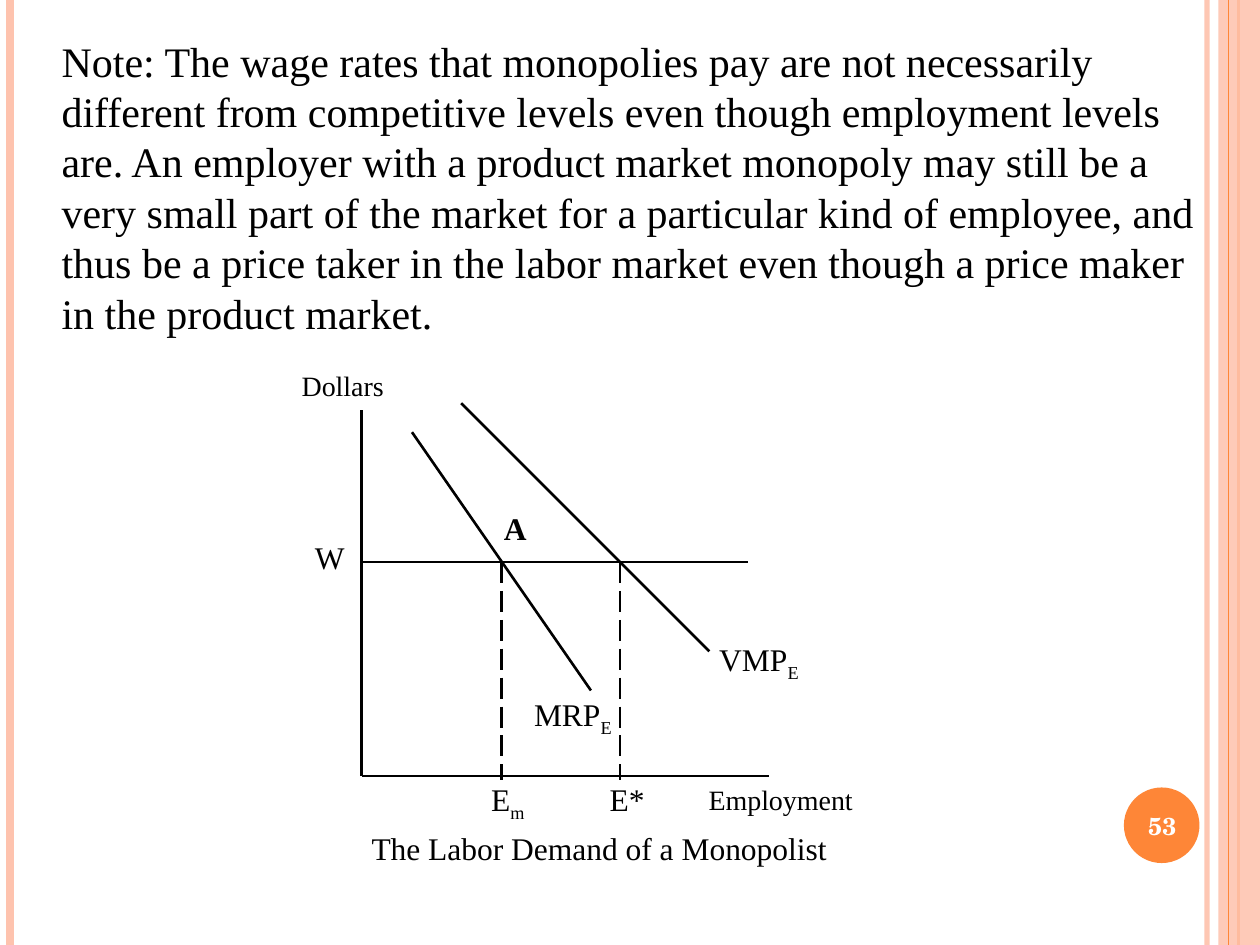
import pptx
import pptx.util
import pptx.dml.color
import pptx.enum.dml
import pptx.enum.shapes
import pptx.enum.text
import pptx.oxml.ns
import lxml.etree

Inches = pptx.util.Inches
COLOURS = {"peach": "FEC3AE", "orange": "FE8637", "black": "000000", "white": "FFFFFF"}
SERIF = "Times New Roman"

deck = pptx.Presentation()
deck.slide_width = Inches(10)
deck.slide_height = Inches(7.5)
page = deck.slides.add_slide(deck.slide_layouts[6])


def add_line(start, end, colour, width, dash=None, opacity=None):
    line = page.shapes.add_connector(
        pptx.enum.shapes.MSO_CONNECTOR.STRAIGHT, *map(Inches, start + end))
    line.line.color.rgb = pptx.dml.color.RGBColor.from_string(COLOURS[colour])
    line.line.width = pptx.util.Pt(width)
    if dash:
        line.line.dash_style = dash
    properties = line._element.spPr
    if opacity:
        tint = properties.find(".//" + pptx.oxml.ns.qn("a:srgbClr"))
        lxml.etree.SubElement(tint, pptx.oxml.ns.qn("a:alpha"), val=str(opacity * 1000))
    lxml.etree.SubElement(properties, pptx.oxml.ns.qn("a:effectLst"))


def add_text(area, pieces, size, font=SERIF, colour="black", bold=False, wrap=False):
    box = page.shapes.add_textbox(*map(Inches, area))
    frame = box.text_frame
    frame.word_wrap = wrap
    para = frame.paragraphs[0]
    for position, words in enumerate(pieces):
        span = para.add_run()
        span.text = words
        span.font.size = pptx.util.Pt(size)
        span.font.name = font
        span.font.bold = bold
        span.font.color.rgb = pptx.dml.color.RGBColor.from_string(COLOURS[colour])
        if position == 1:
            span._r.get_or_add_rPr().set("baseline", "-25000")
    return frame


for x, colour, width, opacity in [
    (9.58, "peach", 3, 93),
    (0.08, "peach", 4.5, None),
    (9.83, "orange", 1.5, None),
]:
    add_line((x, 0), (x, 7.5), colour, width, opacity=opacity)

for kind, area, colour in [
    (pptx.enum.shapes.MSO_SHAPE.RECTANGLE, (9.67, 0, 0.33, 7.5), "peach"),
    (pptx.enum.shapes.MSO_SHAPE.OVAL, (8.92, 6.25, 0.6, 0.6), "orange"),
]:
    shape = page.shapes.add_shape(kind, *map(Inches, area))
    shape.shadow.inherit = False
    shape.fill.solid()
    shape.fill.fore_color.rgb = pptx.dml.color.RGBColor.from_string(COLOURS[colour])
    shape.line.fill.background()
    if colour == "peach":
        tint = shape._element.spPr.find(".//" + pptx.oxml.ns.qn("a:srgbClr"))
        lxml.etree.SubElement(tint, pptx.oxml.ns.qn("a:alpha"), val="87000")
        add_line((9.75, 0), (9.75, 7.5), "orange", 0.75)

note = (
    "Note: The wage rates that monopolies pay are not necessarily different from "
    "competitive levels even though employment levels are. An employer with a product "
    "market monopoly may still be a very small part of the market for a particular kind "
    "of employee, and thus be a price taker in the labor market even though a price "
    "maker in the product market."
)
add_text((0.39, 0.23, 9.21, 2.61), [note], 24, wrap=True)

origin = (2.87, 6.16)
wage = 4.46
for start, end in [
    (origin, (2.87, 3.25)),
    (origin, (6.1, 6.16)),
    ((2.87, wage), (5.94, wage)),
    ((3.66, 3.2), (5.63, 5.17)),
    ((3.27, 3.43), (4.69, 5.48)),
]:
    add_line(start, end, "black", 1.5)
for employment in (3.98, 4.92):
    add_line((employment, wage), (employment, 6.19), "black", 1.5,
             pptx.enum.dml.MSO_LINE.LONG_DASH)

for area, pieces, size, bold in [
    ((5.47, 6.16, 1.46, 0.37), [" Employment"], 16, False),
    ((2.24, 2.88, 0.91, 0.37), [" Dollars"], 16, False),
    ((2.85, 6.53, 3.82, 0.4), ["The Labor Demand of a Monopolist"], 18, False),
    ((5.61, 5.03, 0.85, 0.4), ["VMP", "E"], 18, False),
    ((4.14, 5.47, 0.83, 0.4), ["MRP", "E"], 18, False),
    ((2.4, 4.22, 0.44, 0.4), ["W"], 18, False),
    ((3.9, 3.99, 0.38, 0.4), ["A"], 18, True),
    ((3.8, 6.14, 0.48, 0.4), ["E", "m"], 18, False),
    ((4.74, 6.14, 0.48, 0.4), ["E*"], 18, False),
]:
    add_text(area, pieces, size, bold=bold)

number = add_text((8.89, 6.27, 0.67, 0.57), ["53"], 14, "TeX Gyre Schola", "white", True, True)
number.vertical_anchor = pptx.enum.text.MSO_ANCHOR.MIDDLE
number.paragraphs[0].alignment = pptx.enum.text.PP_ALIGN.CENTER

deck.save("out.pptx")
